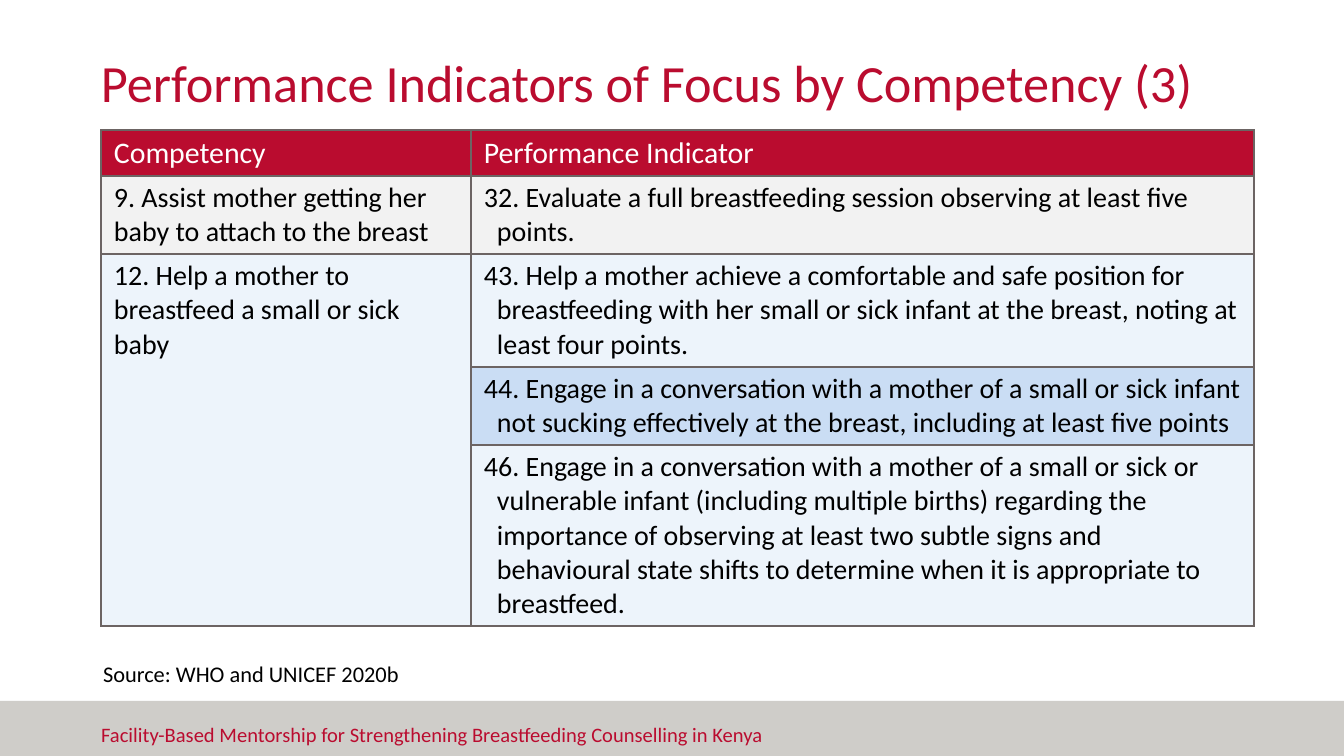
from dataclasses import dataclass

from lxml.etree import SubElement
from pptx import Presentation
from pptx.dml.color import RGBColor as Color
from pptx.enum.shapes import MSO_SHAPE as Shape
from pptx.enum.text import MSO_ANCHOR as Anchor
from pptx.oxml.ns import qn
from pptx.util import Pt

SCALE = 914400 / 134.4


@dataclass(frozen=True)
class Theme:
    font: str = "Calibri"
    brand: str = "BA0C2F"
    band: str = "CFCDC9"
    border: str = "6C6463"
    ink: str = "000000"
    white: str = "FFFFFF"
    grey: str = "F2F2F2"
    pale: str = "EDF4FB"
    blue: str = "CADDF4"
    title_size: int = 28
    header_size: int = 16
    cell_size: int = 15
    source_size: int = 12
    footer_size: int = 11


THEME = Theme()

HEADERS = ("Competency", "Performance Indicator")
GROUPS = [
    ("9. Assist mother getting her baby to attach to the breast", THEME.grey, [
        ("32. Evaluate a full breastfeeding session observing at least five points.", THEME.grey, 78),
    ]),
    ("12. Help a mother to breastfeed a small or sick baby", THEME.pale, [
        ("43. Help a mother achieve a comfortable and safe position for breastfeeding "
         "with her small or sick infant at the breast, noting at least four points.", THEME.pale, 113),
        ("44. Engage in a conversation with a mother of a small or sick infant not sucking "
         "effectively at the breast, including at least five points", THEME.blue, 78),
        ("46. Engage in a conversation with a mother of a small or sick or vulnerable infant "
         "(including multiple births) regarding the importance of observing at least two subtle "
         "signs and behavioural state shifts to determine when it is appropriate to breastfeed.",
         THEME.pale, 181),
    ]),
]


def px(length):
    return round(length * SCALE)


def style_text(frame, size, color):
    for para in frame.paragraphs:
        for span in para.runs:
            span.font.name = THEME.font
            span.font.size = Pt(size)
            span.font.bold = False
            span.font.color.rgb = Color.from_string(color)


def add_text(page, box, text, size, color, margins=(0, 0, 0, 0), anchor=Anchor.TOP):
    frame = page.shapes.add_textbox(*map(px, box)).text_frame
    frame.word_wrap = True
    frame.vertical_anchor = anchor
    frame.margin_left, frame.margin_top, frame.margin_right, frame.margin_bottom = map(px, margins)
    frame.text = text
    style_text(frame, size, color)


def add_title(page, box):
    add_text(page, box, "Performance Indicators of Focus by Competency (3)",
             THEME.title_size, THEME.brand, anchor=Anchor.BOTTOM)


def add_source(page, box):
    add_text(page, box, "Source: WHO and UNICEF 2020b",
             THEME.source_size, THEME.ink, margins=(13, 7, 13, 7))


def add_footer(page, box):
    left, top, width, height = box
    band = page.shapes.add_shape(Shape.RECTANGLE, *map(px, box))
    band.shadow.inherit = False
    band.fill.solid()
    band.fill.fore_color.rgb = Color.from_string(THEME.band)
    band.line.fill.background()
    add_text(page, (left + 101, top + 14, 707, 63),
             "Facility-Based Mentorship for Strengthening Breastfeeding Counselling in Kenya",
             THEME.footer_size, THEME.brand, margins=(0, 7, 13, 7))


def add_borders(cell):
    properties = cell._tc.get_or_add_tcPr()
    for side in ("a:lnL", "a:lnR", "a:lnT", "a:lnB"):
        line = SubElement(properties, qn(side), w=str(Pt(1)))
        fill = SubElement(line, qn("a:solidFill"))
        SubElement(fill, qn("a:srgbClr"), val=THEME.border)


def fill_cell(cell, text, fill, size=THEME.cell_size, color=THEME.ink, hanging=0):
    cell.text = text
    cell.fill.solid()
    cell.fill.fore_color.rgb = Color.from_string(fill)
    if hanging:
        properties = cell.text_frame.paragraphs[0]._p.get_or_add_pPr()
        properties.set("marL", str(px(hanging)))
        properties.set("indent", str(-px(hanging)))
    style_text(cell.text_frame, size, color)


def add_indicator_table(page, box):
    width = box[2]
    heights = [46] + [height for _, _, items in GROUPS for _, _, height in items]
    table = page.shapes.add_table(len(heights), 2, *map(px, box)).table
    for column, share in zip(table.columns, (370, width - 370)):
        column.width = px(share)
    for row, height in zip(table.rows, heights):
        row.height = px(height)
    for cell in table.iter_cells():
        cell.margin_left = cell.margin_right = px(13)
        cell.margin_top = cell.margin_bottom = px(5)
        add_borders(cell)

    for column, text in enumerate(HEADERS):
        fill_cell(table.cell(0, column), text, THEME.brand, THEME.header_size, THEME.white)
    first = 1
    for competency, fill, items in GROUPS:
        last = first + len(items) - 1
        if last > first:
            table.cell(first, 0).merge(table.cell(last, 0))
        fill_cell(table.cell(first, 0), competency, fill)
        for row, (indicator, shade, _) in enumerate(items, first):
            fill_cell(table.cell(row, 1), indicator, shade, hanging=13)
        first = last + 1


def main():
    deck = Presentation()
    deck.slide_width, deck.slide_height = px(1344), px(756)
    page = deck.slides.add_slide(deck.slide_layouts[6])
    add_footer(page, (0, 701, 1344, 55))
    add_title(page, (101, 38, 1142, 75))
    add_indicator_table(page, (101, 130, 1153, 496))
    add_source(page, (90, 653, 933, 41))
    deck.save("out.pptx")


if __name__ == "__main__":
    main()
